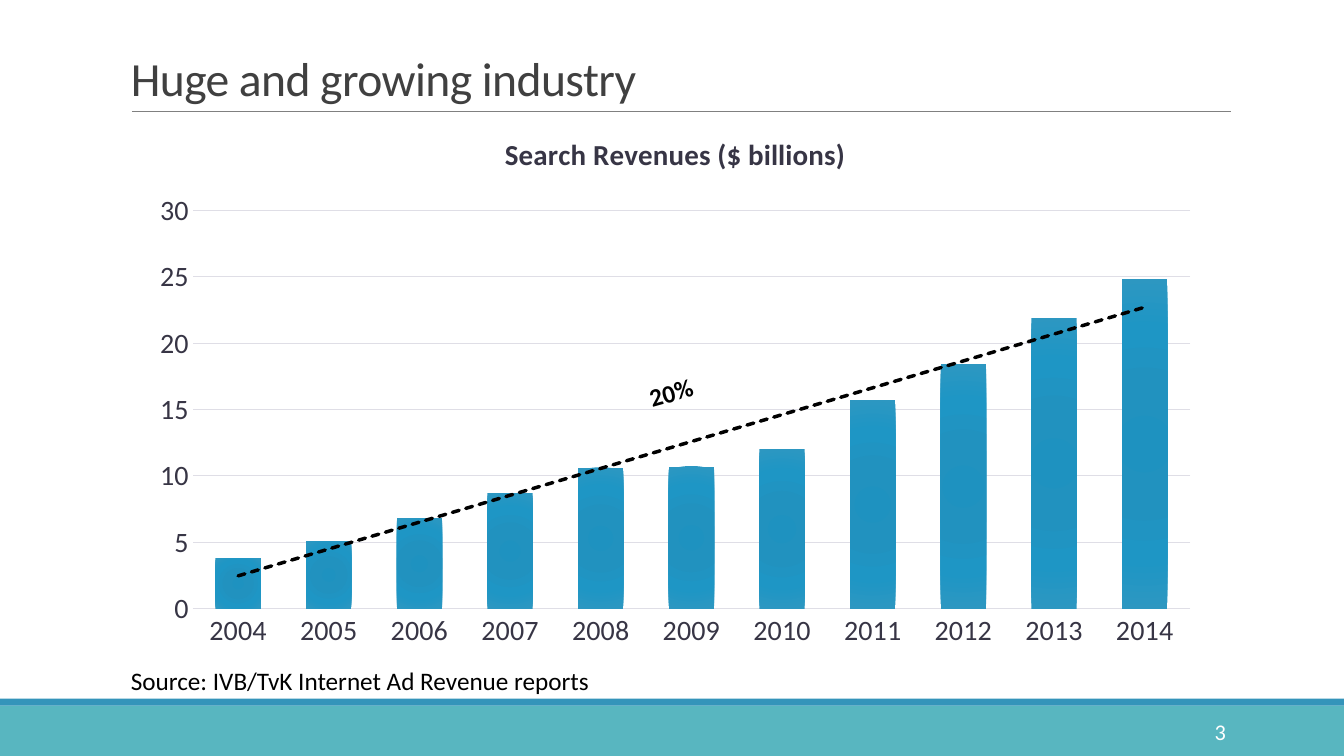
from dataclasses import dataclass

from lxml import etree
from pptx import Presentation, util as u
from pptx.chart import data as cd
from pptx.dml import color as dc
from pptx.enum import chart as ec, shapes as es, text as et
from pptx.oxml import ns, parse_xml


@dataclass(frozen=True)
class Theme:
    font: str = "Calibri"
    teal: str = "58B6C0"
    blue: str = "3494BA"
    rule: str = "808080"
    head: str = "404040"
    label: str = "373545"
    grid: str = "DFDEE6"
    black: str = "000000"
    white: str = "FFFFFF"
    glow: tuple = ((0, "1E92C0"), (34, "2192BF"), (70, "1E96C5"), (100, "2D97C1"))
    big: float = 34
    name: float = 20.7
    mid: float = 20
    body: float = 18
    small: float = 16


@dataclass(frozen=True)
class Band:
    top: float
    high: float
    fill: str


T = Theme()
WIDE, HIGH = 960, 540
BANDS = [Band(504, 36, T.teal), Band(499, 5, T.blue)]
SALES = [3.8, 5.1, 6.8, 8.7, 10.6, 10.7, 12, 15.7, 18.4, 21.9, 24.8]
FIRST = 2004
NAME = "Search Revenues ($ billions)"


def rgb(code: str) -> dc.RGBColor:
    return dc.RGBColor.from_string(code)


def place(*box: float) -> list:
    return [u.Pt(n) for n in box]


def style(font, size: float, color: str, bold: bool = False) -> None:
    font.name, font.size, font.bold = T.font, u.Pt(size), bold
    font.color.rgb = rgb(color)


def write(slide, words: str, box: tuple, *, size: float = T.body,
          color: str = T.black, bold: bool = False, wrap: bool = False,
          align=et.PP_ALIGN.LEFT, anchor=et.MSO_ANCHOR.TOP,
          lead: float = 1, track: float = 0, turn: float = 0) -> None:
    shape = slide.shapes.add_textbox(*place(*box))
    shape.rotation = turn
    frame = shape.text_frame
    frame.word_wrap, frame.vertical_anchor = wrap, anchor
    para = frame.paragraphs[0]
    para.alignment, para.line_spacing = align, lead
    run = para.add_run()
    run.text = words
    style(run.font, size, color, bold)
    if track:
        run._r.get_or_add_rPr().set("spc", str(round(track * 100)))


def band(slide, item: Band) -> None:
    bar = slide.shapes.add_shape(
        es.MSO_SHAPE.RECTANGLE, *place(0, item.top, WIDE, item.high))
    bar.shadow.inherit = False
    bar.fill.solid()
    bar.fill.fore_color.rgb = rgb(item.fill)
    bar.line.fill.background()


def rule(slide, left: float, right: float, top: float) -> None:
    line = slide.shapes.add_connector(
        es.MSO_CONNECTOR.STRAIGHT, *place(left, top, right, top))
    line.line.color.rgb = rgb(T.rule)
    line.line.width = u.Pt(0.5)
    etree.SubElement(line._element.spPr, ns.qn("a:effectLst"))


def shade(series) -> None:
    """Fill the columns with a radial gradient."""
    series.format.fill.gradient()
    old = series._element.find(".//" + ns.qn("a:gradFill"))
    stops = "".join(f'<a:gs pos="{pos * 1000}"><a:srgbClr val="{code}"/></a:gs>'
                    for pos, code in T.glow)
    new = parse_xml(
        f'<a:gradFill {ns.nsdecls("a")} rotWithShape="1"><a:gsLst>{stops}</a:gsLst>'
        '<a:path path="circle"><a:fillToRect l="100000" t="100000" '
        'r="100000" b="100000"/></a:path></a:gradFill>')
    old.getparent().replace(old, new)


def trend(series) -> None:
    """Add a dashed linear trend line."""
    line = parse_xml(
        f'<c:trendline {ns.nsdecls("c", "a")}><c:spPr>'
        f'<a:ln w="{u.Pt(2.5)}" cap="rnd"><a:solidFill><a:srgbClr val="{T.black}"/>'
        '</a:solidFill><a:prstDash val="sysDash"/></a:ln></c:spPr>'
        '<c:trendlineType val="linear"/><c:dispRSqr val="0"/>'
        '<c:dispEq val="0"/></c:trendline>')
    series._element.find(ns.qn("c:cat")).addprevious(line)


def layout(chart, left: float, top: float, wide: float, high: float) -> None:
    """Fix the inner plot area, as shares of the chart."""
    area = chart._chartSpace.find(".//" + ns.qn("c:plotArea"))
    for old in area.findall(ns.qn("c:layout")):
        area.remove(old)
    parts = "".join(f'<c:{key} val="{val}"/>' for key, val in (
        ("layoutTarget", "inner"), ("xMode", "edge"), ("yMode", "edge"),
        ("x", left), ("y", top), ("w", wide), ("h", high)))
    area.insert(0, parse_xml(
        f'<c:layout {ns.nsdecls("c")}><c:manualLayout>{parts}'
        '</c:manualLayout></c:layout>'))


def graph(slide, box: tuple) -> None:
    data = cd.CategoryChartData()
    data.categories = [str(FIRST + n) for n in range(len(SALES))]
    data.add_series(NAME, SALES)
    chart = slide.shapes.add_chart(
        ec.XL_CHART_TYPE.COLUMN_CLUSTERED, *place(*box), data).chart
    style(chart.font, T.mid, T.label)
    chart.has_legend = False

    # Chart title
    chart.has_title = True
    para = chart.chart_title.text_frame.paragraphs[0]
    run = para.add_run()
    run.text = NAME
    style(run.font, T.name, T.label, True)
    chart.chart_title.include_in_layout = False

    # Axes
    years, money = chart.category_axis, chart.value_axis
    for axis in (years, money):
        axis.major_tick_mark = axis.minor_tick_mark = ec.XL_TICK_MARK.NONE
        style(axis.tick_labels.font, T.mid, T.label)
    money.minimum_scale, money.maximum_scale, money.major_unit = 0, 30, 5
    money.has_major_gridlines = True
    money.format.line.fill.background()
    for line in (years.format.line, money.major_gridlines.format.line):
        line.color.rgb = rgb(T.grid)
        line.width = u.Pt(0.75)

    # Columns and trend
    plot = chart.plots[0]
    plot.gap_width, plot.overlap, plot.vary_by_categories = 100, -24, False
    series = plot.series[0]
    series.invert_if_negative = False
    shade(series)
    trend(series)
    layout(chart, 0.05, 0.18, 0.93, 0.73)


def main() -> None:
    deck = Presentation()
    deck.slide_width, deck.slide_height = place(WIDE, HIGH)
    slide = deck.slides.add_slide(deck.slide_layouts[6])

    # Footer bands and title rule
    for item in BANDS:
        band(slide, item)
    rule(slide, 94.3, 879, 79.7)

    # Title, chart and captions
    write(slide, "Huge and growing industry", (86.4, 10.5, 792, 69), size=T.big,
          color=T.head, wrap=True, anchor=et.MSO_ANCHOR.BOTTOM,
          lead=0.85, track=-0.4)
    graph(slide, (99.4, 79.9, 766, 390.2))
    write(slide, "20%", (456.5, 265.7, 46, 29), bold=True, turn=344.4)
    write(slide, "3", (779.8, 508.3, 103, 28.8), size=T.small, color=T.white,
          wrap=True, align=et.PP_ALIGN.RIGHT, anchor=et.MSO_ANCHOR.MIDDLE)
    write(slide, "Source: IVB/TvK Internet Ad Revenue reports",
          (86.4, 471.6, 380, 29), wrap=True)

    deck.save("out.pptx")


if __name__ == "__main__":
    main()
